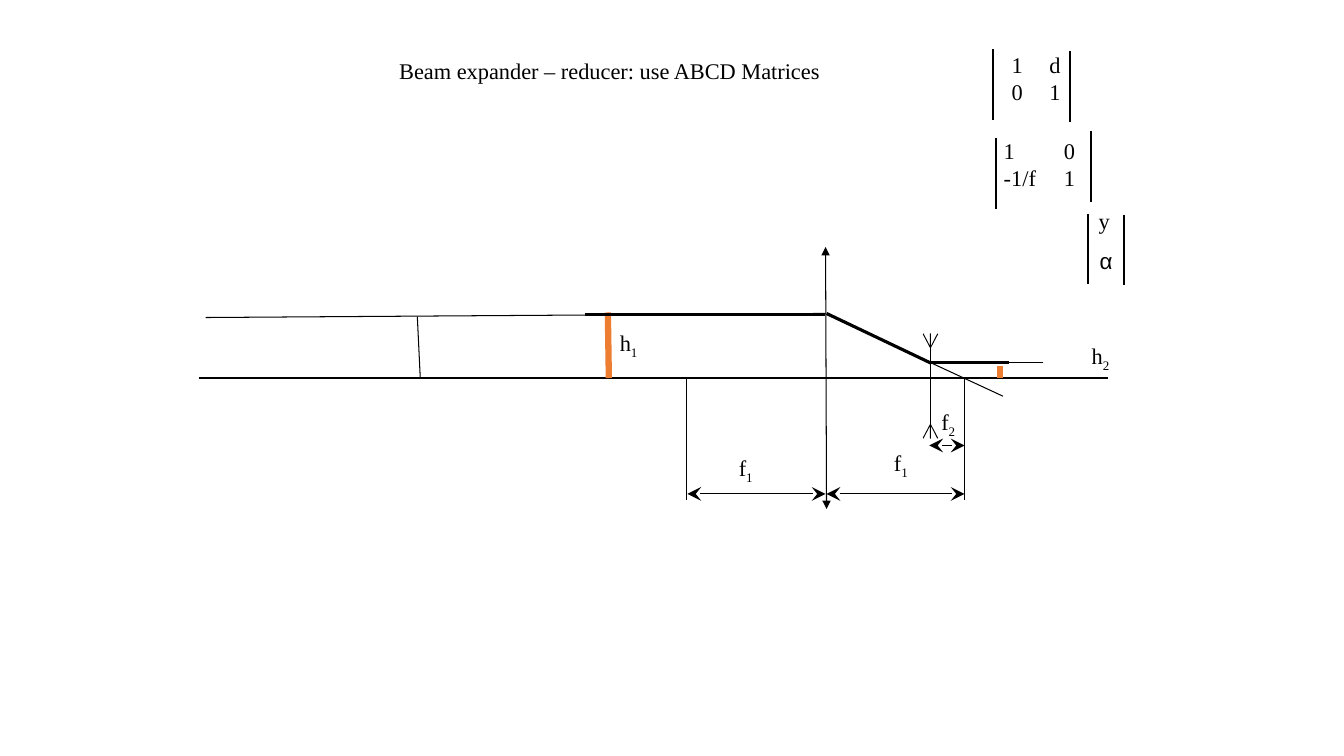
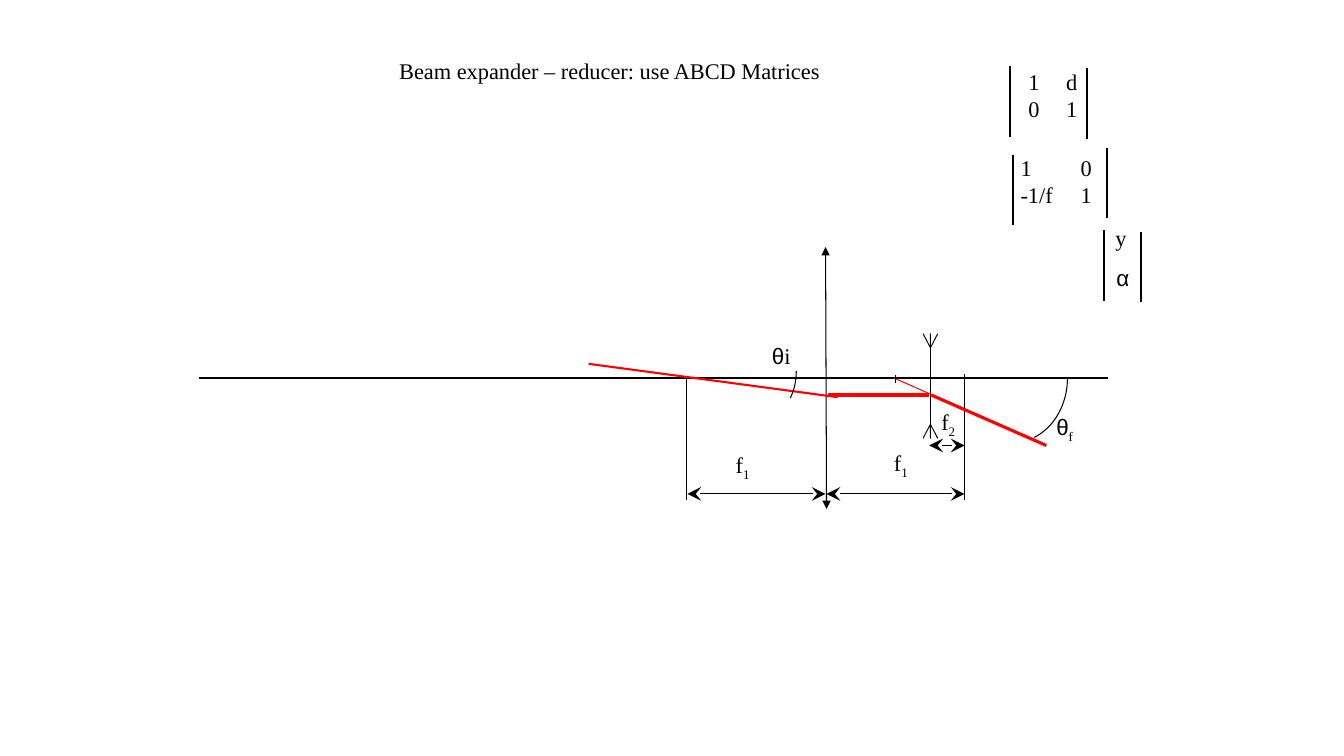
"""Build two slides of ray diagrams for a beam expander."""
from lxml.etree import SubElement
from pptx import Presentation
from pptx.dml.color import RGBColor
from pptx.enum.text import MSO_ANCHOR, MSO_AUTO_SIZE, PP_ALIGN
from pptx.oxml.ns import qn
from pptx.util import Pt

HEX = {"ink": "000000", "ray": "FF0000", "bar": "ED7D31"}
SERIF, SANS = "Times New Roman", "Arial"
TITLE = "Beam expander – reducer: use ABCD Matrices"

AXIS = 270
LENS = 590.4
THIN = 664.6
FOCUS = 689
BACK = 490.5
DIM = 352.8

SETUP = [
    ((141.8, AXIS), (791.3, AXIS), {}),
    ((589.7, 176.4), (LENS, 363.6), {"ends": "triangle"}),
    ((THIN, 303.1), (THIN, 245.5), {}),
    ((THIN, 249.1), (THIN, 241.2), {"head": "arrow"}),
    ((THIN, 302.4), (THIN, 309.6), {"head": "arrow"}),
    ((FOCUS, AXIS), (FOCUS, 357), {"width": 0.25}),
    ((BACK, AXIS), (BACK, 357), {"width": 0.25}),
    ((LENS, DIM), (FOCUS, DIM), {"ends": "stealth"}),
    ((BACK + 0.5, DIM), (589.7, DIM), {"ends": "stealth"}),
    ((663.8, 318.2), (FOCUS, 318.2), {"ends": "stealth"}),
]
MARKS = [("f", "1", 631.4, 317.5), ("f", "2", 665.3, 288)]

MATRIX = [
    {"rows": ["1\td", "0\t1"], "at": (715.5, 33.1), "tab": 27,
     "bars": [(709.2, 35.3), (764.6, 36.7)]},
    {"rows": ["1\t0", "-1/f\t1"], "at": (709.9, 94.3), "tab": 43,
     "bars": [(711.4, 98.6), (779, 93.6)]},
    {"rows": ["y"], "at": (777.6, 144.7), "bars": [(776.9, 152.6), (802.8, 153.4)]},
    {"rows": ["α"], "at": (778.3, 172.8), "bars": []},
]
TALL = 50.4

SLIDES = [
    {
        "shift": 0,
        "lines": [
            ((146.9, 226.8), (589.7, 223.9), {}),
            ((298.1, 226.1), (300.2, AXIS), {}),
            ((LENS, 224.6), (716.4, 283), {}),
            ((745.2, 259.2), (665.3, 259.2), {}),
            ((434.2, 223.2), (434.9, AXIS), {"color": "bar", "width": 4.5}),
            ((714.2, 261.4), (714.2, AXIS), {"color": "bar", "width": 4.5}),
            ((417.6, 224.4), (589, 224.4), {"width": 2.25}),
            ((LENS, 223.9), (THIN, 259.2), {"width": 2.25}),
            ((THIN, 259.2), (720.7, 259.2), {"width": 2.25}),
        ],
        "marks": [("h", "1", 435.6, 231.8), ("h", "2", 772.6, 241.2),
                  ("f", "1", 520.6, 321.1)],
        "arcs": [],
    },
    {
        "shift": 12,
        "lines": [
            ((420.5, 259.9), (598.3, 283.7), {"color": "ray", "width": 1.5}),
            ((591.1, 282.2), (663.8, 282.2), {"color": "ray", "width": 2.25}),
            ((638.6, AXIS), (747.4, 318.2), {"color": "ray"}),
            ((665.3, 282.2), (747.4, 318.2), {"color": "ray", "width": 2.25}),
            ((639.4, 273.6), (639.4, 267.8), {}),
            ((FOCUS, 272.9), (FOCUS, 267.1), {}),
        ],
        "marks": [("θi", "", 544.3, 241.2), ("θ", "f", 747.4, 291.6),
                  ("f", "1", 518.4, 319)],
        "arcs": [
            [(738.7, 312.5), (753.1, 305.3), (762.5, 288.7), (762.5, AXIS)],
            [(564.5, 284.4), (567.4, 278.6), (568.8, 272.2), (568.8, 265)],
        ],
    },
]


def write(shape, rows, sub="", size=16, color="ink", tab=0):
    frame = shape.text_frame
    frame.word_wrap = True
    frame.auto_size = MSO_AUTO_SIZE.NONE
    frame.vertical_anchor = MSO_ANCHOR.TOP
    for i, row in enumerate(rows):
        para = frame.add_paragraph() if i else frame.paragraphs[0]
        para.alignment = PP_ALIGN.LEFT
        if tab:
            stops = SubElement(para._p.get_or_add_pPr(), qn("a:tabLst"))
            SubElement(stops, qn("a:tab"), pos=str(Pt(tab)), algn="l")
        greek = row[:1] if row[0] in "θα" else ""
        parts = [(greek, SANS), (row[len(greek):], SERIF), (sub, SERIF)]
        for n, (text, face) in enumerate(parts):
            if not text:
                continue
            run = para.add_run()
            run.text = text
            run.font.name = face
            run.font.size = Pt(size)
            run.font.color.rgb = RGBColor.from_string(HEX[color])
            if n == 2:
                run._r.get_or_add_rPr().set("baseline", "-25000")


def label(slide, rows, x, y, wide=40, **form):
    box = slide.shapes.add_textbox(Pt(x), Pt(y), Pt(wide), Pt(7.2 + 19.4 * len(rows)))
    write(box, rows, **form)


def line(slide, start, end, color="ink", width=0.75, head=None, ends=None):
    link = slide.shapes.add_connector(1, *map(Pt, start + end))
    link.line.color.rgb = RGBColor.from_string(HEX[color])
    link.line.width = Pt(width)
    tips = {"a:headEnd": head or ends, "a:tailEnd": ends}
    for tag, kind in tips.items():
        if kind:
            size = "med" if kind == "triangle" else "lg"
            SubElement(link.line._get_or_add_ln(), qn(tag), type=kind, w=size, len=size)
    SubElement(link._element.spPr, qn("a:effectLst"))


def arc(slide, knots, steps=16):
    dots = []
    for i in range(steps + 1):
        t = i / steps
        mix = ((1 - t) ** 3, 3 * t * (1 - t) ** 2, 3 * t * t * (1 - t), t ** 3)
        dots.append(tuple(Pt(sum(m * k[d] for m, k in zip(mix, knots))) for d in (0, 1)))
    path = slide.shapes.build_freeform(*dots[0])
    path.add_line_segments(dots[1:], close=False)
    shape = path.convert_to_shape()
    shape.shadow.inherit = False
    shape.fill.background()
    shape.line.color.rgb = RGBColor.from_string(HEX["ink"])
    shape.line.width = Pt(0.75)


def matrix(slide, data, shift):
    x, y = data["at"]
    label(slide, data["rows"], x + shift, y + shift, wide=80, tab=data.get("tab", 0))
    for left, top in data["bars"]:
        left, top = left + shift, top + shift
        line(slide, (left, top), (left, top + TALL), width=1.5)


def draw(deck, data):
    slide = deck.slides.add_slide(deck.slide_layouts[5])
    title = slide.shapes.title
    title.left, title.top, title.width, title.height = map(Pt, (277.9, 37.4, 330, 26.6))
    write(title, [TITLE])
    for start, end, form in SETUP + data["lines"]:
        line(slide, start, end, **form)
    for knots in data["arcs"]:
        arc(slide, knots)
    for text, sub, x, y in MARKS + data["marks"]:
        label(slide, [text], x, y, sub=sub)
    for part in MATRIX:
        matrix(slide, part, data["shift"])


def main():
    deck = Presentation()
    deck.slide_width, deck.slide_height = Pt(960), Pt(540)
    for data in SLIDES:
        draw(deck, data)
    deck.save("out.pptx")


if __name__ == "__main__":
    main()
